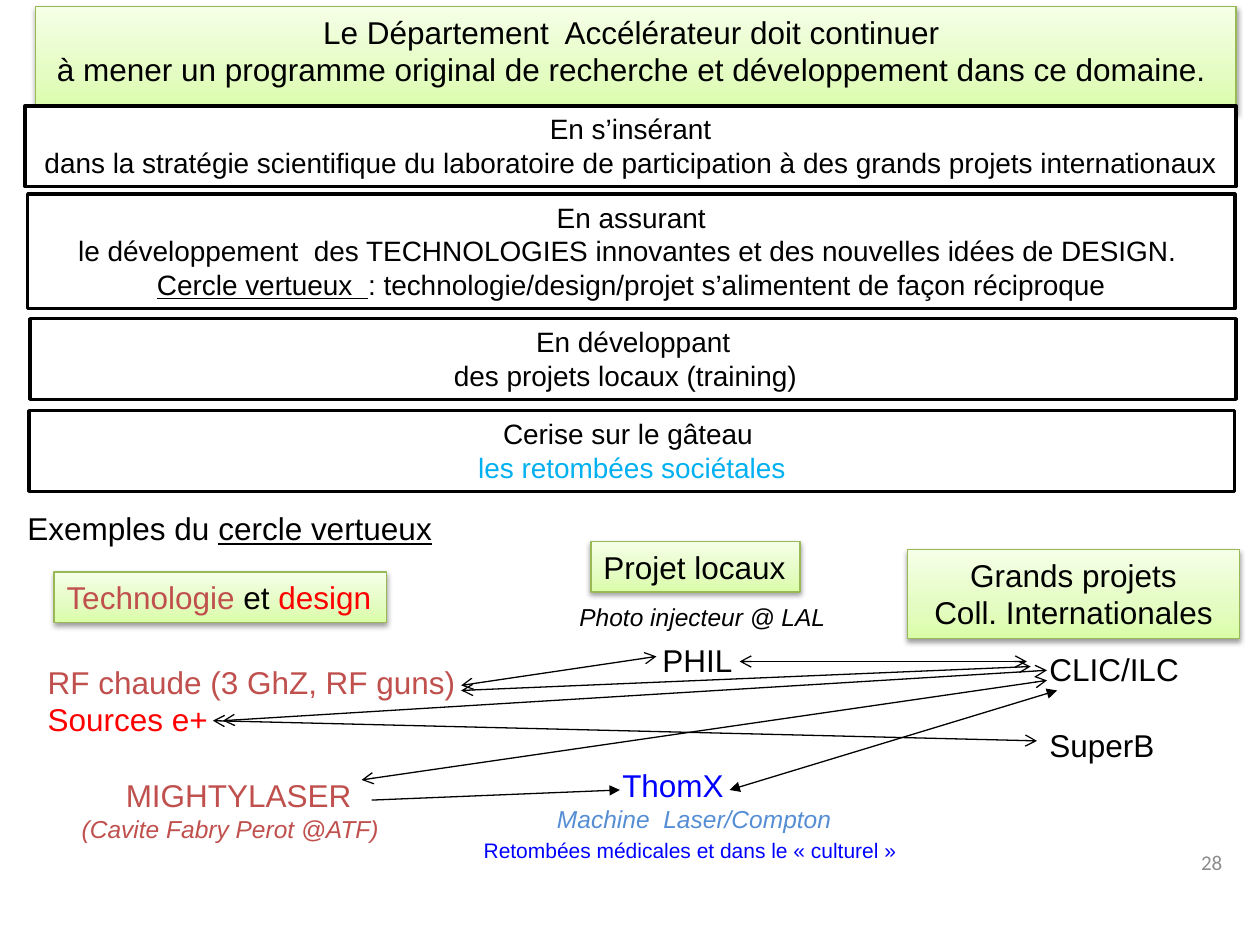
"""Build the slide on the accelerator department's research programme."""
from copy import deepcopy

from pptx import Presentation
from pptx.dml.color import RGBColor
from pptx.enum.shapes import MSO_CONNECTOR as Connector, MSO_SHAPE as Shape
from pptx.enum.text import MSO_ANCHOR as Anchor, MSO_AUTO_SIZE as AutoSize, PP_ALIGN as Align
from pptx.oxml.ns import qn
from pptx.util import Inches, Pt
from lxml.etree import SubElement

BLACK, WHITE, RED, BRICK, BLUE = "000000", "FFFFFF", "FF0000", "C0504D", "0000FF"
SKY, STEEL, GRAY, GREEN_EDGE = "00B0F0", "558ED5", "8C8C8C", "98B955"
GREEN_STOPS = [(0, "DAFDA7"), (0.35, "E4FCC2"), (1, "F5FFE7")]


def color(value):
    return RGBColor.from_string(value)


def run(text, ink=BLACK, **style):
    return {"text": text, "ink": ink, **style}


def line(*runs, **layout):
    return {"runs": runs, **layout}


class SlideBuilder:
    """Holds the text style and the current slide."""

    def __init__(self, slide, font="Arial", size=18):
        self.slide, self.font, self.size = slide, font, size

    def fill_text(self, shape, lines, align=Align.LEFT, size=None, font=None,
                  wrap=True, anchor=Anchor.TOP, grow=True):
        frame = shape.text_frame
        frame.word_wrap = wrap
        frame.auto_size = AutoSize.SHAPE_TO_FIT_TEXT if grow else AutoSize.NONE
        frame.vertical_anchor = anchor
        for index, content in enumerate(lines):
            paragraph = frame.add_paragraph() if index else frame.paragraphs[0]
            paragraph.alignment = align
            paragraph.space_before = Pt(content.get("before", 0))
            paragraph.line_spacing = content.get("spacing", 1.0)
            if "indent" in content:
                paragraph._p.get_or_add_pPr().set("marL", str(Inches(content["indent"])))
            for part in content["runs"]:
                text_run = paragraph.add_run()
                text_run.text = part["text"]
                text_run.font.name = font or self.font
                text_run.font.size = Pt(part.get("size", size or self.size))
                text_run.font.italic = part.get("italic")
                text_run.font.underline = part.get("underline")
                text_run.font.color.rgb = color(part["ink"])

    def text(self, box, lines, **style):
        shape = self.slide.shapes.add_textbox(*map(Inches, box))
        self.fill_text(shape, lines, **style)

    def rectangle(self, box):
        shape = self.slide.shapes.add_shape(Shape.RECTANGLE, *map(Inches, box))
        shape.shadow.inherit = False
        return shape

    def outline(self, shape, edge, width):
        shape.line.color.rgb = color(edge)
        shape.line.width = Pt(width)

    def framed(self, box, lines):
        shape = self.rectangle(box)
        shape.fill.solid()
        shape.fill.fore_color.rgb = color(WHITE)
        self.outline(shape, BLACK, 2)
        self.fill_text(shape, lines, align=Align.CENTER, size=16)

    def caption(self, box, lines, **style):
        shape = self.rectangle(box)
        shape.fill.background()
        self.outline(shape, WHITE, 0.75)
        self.fill_text(shape, lines, wrap=False, **style)

    def make_green(self, shape):
        shape.fill.gradient()
        shape.fill.gradient_angle = 90
        properties = shape._element.spPr
        stop_list = properties.find(".//" + qn("a:gsLst"))
        stop_list.append(deepcopy(stop_list[0]))
        for stop, (position, tone) in zip(shape.fill.gradient_stops, GREEN_STOPS):
            stop.position = position
            stop.color.rgb = color(tone)
        self.outline(shape, GREEN_EDGE, 0.75)
        shape.shadow.inherit = False
        shadow = SubElement(properties.find(qn("a:effectLst")), qn("a:outerShdw"),
                            blurRad=str(Pt(3.1)), dist=str(Pt(1.6)), dir="5400000", rotWithShape="0")
        tone = SubElement(shadow, qn("a:srgbClr"), val=BLACK)
        SubElement(tone, qn("a:alpha"), val="38000")

    def green(self, box, lines, **style):
        shape = self.rectangle(box)
        self.make_green(shape)
        self.fill_text(shape, lines, **style)

    def title(self, box, lines):
        shape = self.slide.shapes.title
        shape.left, shape.top, shape.width, shape.height = map(Inches, box)
        self.make_green(shape)
        self.fill_text(shape, lines, align=Align.CENTER)

    def arrow(self, start, end, head="arrow", tail="arrow"):
        connector = self.slide.shapes.add_connector(
            Connector.STRAIGHT, *map(Inches, (*start, *end)))
        self.outline(connector, BLACK, 0.75)
        stroke = connector.line._get_or_add_ln()
        for end_name, kind in (("a:headEnd", head), ("a:tailEnd", tail)):
            if kind:
                SubElement(stroke, qn(end_name), type=kind)
        SubElement(connector._element.spPr, qn("a:effectLst"))


def main():
    presentation = Presentation()
    presentation.slide_width, presentation.slide_height = Inches(10), Inches(7.5)
    slide = presentation.slides.add_slide(presentation.slide_layouts[5])
    builder = SlideBuilder(slide)

    builder.title((0.28, 0.05, 9.53, 0.71), [
        line(run("Le Département  Accélérateur doit continuer ")),
        line(run("à mener un programme original de recherche et développement dans ce domaine. "))])

    builder.framed((0.2, 0.84, 9.61, 0.64), [
        line(run("En s’insérant")),
        line(run("dans la stratégie scientifique du laboratoire de participation "
                 "à des grands projets internationaux"))])
    builder.framed((0.22, 1.54, 9.58, 0.91), [
        line(run("En assurant")),
        line(run("le développement  des TECHNOLOGIES innovantes et des nouvelles idées de DESIGN. ")),
        line(run("Cercle vertueux  ", underline=True),
             run(": technologie/design/projet s’alimentent de façon réciproque"))])
    builder.framed((0.24, 2.53, 9.57, 0.64), [
        line(run("En développant")),
        line(run("des projets locaux (training)  "))])
    builder.framed((0.23, 3.26, 9.57, 0.64), [
        line(run("Cerise sur le gâteau ")),
        line(run(" les retombées sociétales ", SKY))])

    builder.text((0.12, 3.99, 3.44, 0.4), [
        line(run("Exemples du "), run("cercle vertueux", underline=True))], wrap=False)
    builder.green((0.43, 4.54, 2.64, 0.4), [
        line(run("Technologie", BRICK), run(" et "), run("design", RED))], wrap=False)
    builder.green((4.69, 4.3, 1.66, 0.4), [line(run("Projet locaux"))], wrap=False)
    builder.green((7.2, 4.36, 2.64, 0.71), [
        line(run("Grands projets")), line(run("Coll. Internationales"))], align=Align.CENTER)

    builder.text((0.28, 5.21, 3.47, 1.85), [
        line(run("RF chaude (3 GhZ, RF guns)", BRICK)),
        line(run("Sources e+", RED)),
        line(run("MIGHTYLASER", BRICK), before=21.6, indent=0.62),
        line(run("(Cavite Fabry Perot @ATF)", BRICK, size=14, italic=True), indent=0.27)],
        wrap=False)
    builder.caption((4.49, 4.77, 2.17, 0.29), [
        line(run("Photo injecteur @ LAL", italic=True), spacing=0.8)], size=14, align=Align.CENTER)
    builder.caption((5.16, 5.04, 0.76, 0.4), [line(run("PHIL"))])
    builder.text((8.23, 5.11, 1.24, 1.01), [
        line(run("CLIC/ILC")), line(run("SuperB"), before=21.6)], wrap=False)
    builder.text((4.84, 6.03, 1.02, 0.4), [line(run("ThomX", BLUE))], wrap=False)
    builder.text((4.13, 6.33, 2.76, 0.34), [
        line(run("Machine  Laser/Compton", STEEL, italic=True))], size=14, align=Align.CENTER)
    builder.text((3.74, 6.6, 3.59, 0.3), [
        line(run("Retombées médicales et dans le « culturel »", BLUE))], size=12, wrap=False)
    builder.text((7.47, 6.64, 2.33, 0.4), [line(run("28", GRAY))], size=12, font="Calibri",
                 align=Align.RIGHT, anchor=Anchor.MIDDLE, grow=False)

    builder.arrow((2.95, 6.35), (4.92, 6.27), head=None, tail="triangle")
    builder.arrow((5.79, 6.27), (8.39, 5.48), head="triangle", tail="triangle")
    for start, end in [
        ((3.66, 5.44), (5.21, 5.21)),
        ((3.66, 5.48), (8.18, 5.29)),
        ((5.87, 5.25), (8.15, 5.25)),
        ((1.77, 5.72), (8.31, 5.32)),
        ((1.69, 5.72), (8.23, 5.88)),
        ((2.87, 6.19), (8.31, 5.4)),
    ]:
        builder.arrow(start, end)

    presentation.save("out.pptx")


if __name__ == "__main__":
    main()
